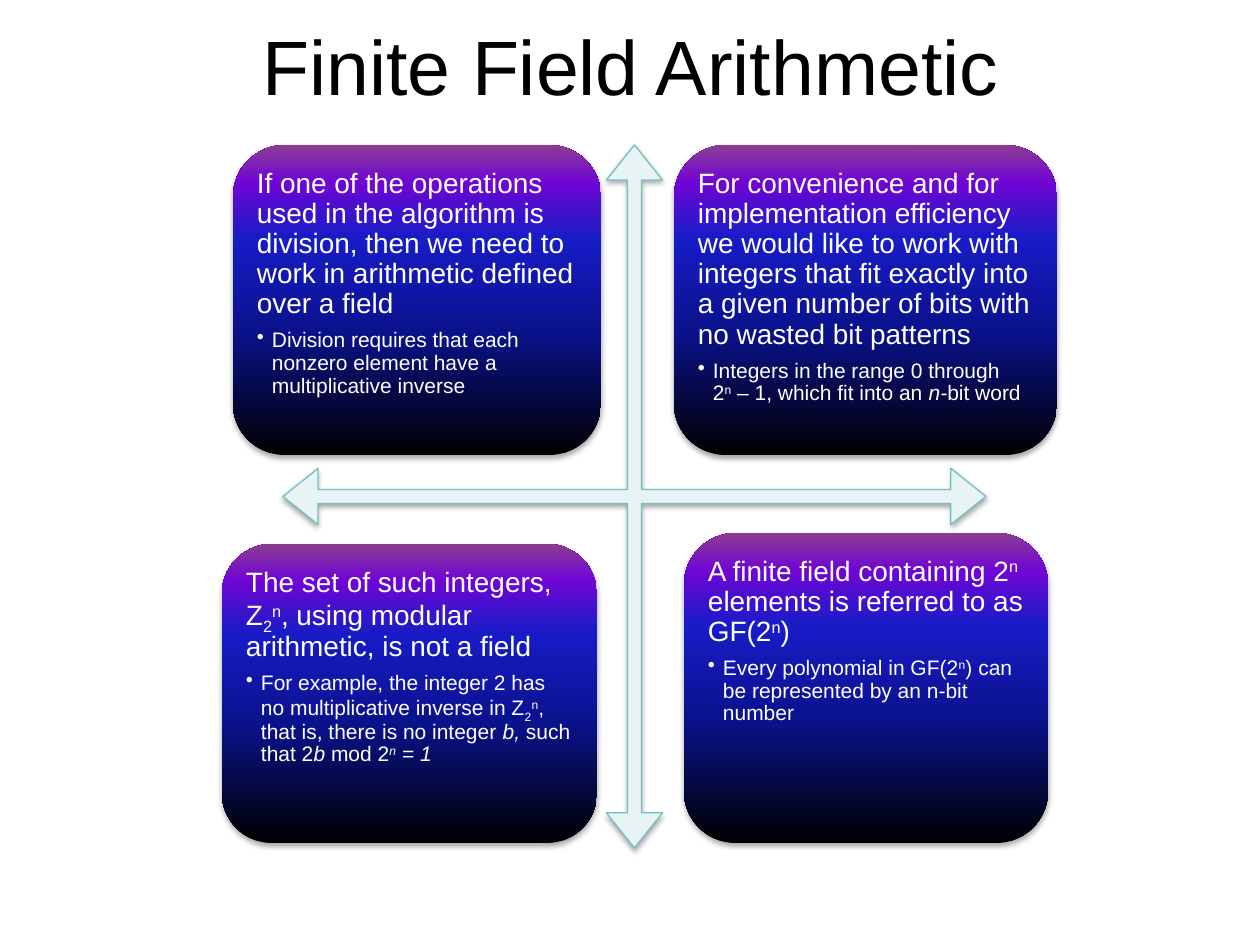
import pptx
import pptx.dml.color
import pptx.enum.shapes
import pptx.enum.text
import pptx.oxml.ns
import pptx.util
from lxml import etree

PX = 914400 / 126
FONT = "Arial"
CARD_STOPS = [(0, "000000"), (40, "0A128C"), (70, "181CC7"), (88, "7005D4"), (100, "8C3D91")]
BASELINES = {"sup": 30000, "sub": -25000}
SUP_N = ("n", "sup")
SUB_2 = ("2", "sub")

# Each card: box, heading spans, bullet spans; a styled span is (text, styles).
CARDS = [
    ((233, 145, 368, 310),
     ["If one of the operations used in the algorithm is division, then we need "
      "to work in arithmetic defined over a field"],
     ["Division requires that each nonzero element have a multiplicative inverse"]),
    ((674, 145, 383, 310),
     ["For convenience and for implementation efficiency we would like to work with "
      "integers that fit exactly into a given number of bits with no wasted bit patterns"],
     ["Integers in the range 0 through", "\n", "2", SUP_N, " – 1, which fit into an ",
      ("n-", "italic"), "bit word"]),
    ((222, 544, 375, 299),
     ["The set of such integers, Z", SUB_2, SUP_N, ", using modular arithmetic, is not a field"],
     ["For example, the integer 2 has no multiplicative inverse in Z", SUB_2, SUP_N,
      ", that is, there is no integer ", ("b, ", "italic"), "such that 2", ("b ", "italic"),
      "mod 2", ("n", "italic sup"), (" = 1", "italic")]),
    ((684, 533, 364, 310),
     ["A finite field containing 2", SUP_N, " elements is referred to as GF(2", SUP_N, ")"],
     ["Every polynomial in GF(2", SUP_N, ") can be represented by an n-bit number"]),
]


def px(length):
    return pptx.util.Emu(round(length * PX))


def place(box):
    return [px(length) for length in box]


def rgb(value):
    return pptx.dml.color.RGBColor.from_string(value)


def add_child(parent, tag, **attributes):
    child = etree.SubElement(parent, pptx.oxml.ns.qn(tag))
    for name, value in attributes.items():
        child.set(name, str(value))
    return child


def add_shadow(shape):
    shape.shadow.inherit = False
    effects = shape._element.spPr.find(pptx.oxml.ns.qn("a:effectLst"))
    shadow = add_child(effects, "a:outerShdw", blurRad=40000, dist=23000,
                       dir=5400000, rotWithShape=0)
    color = add_child(shadow, "a:srgbClr", val="000000")
    add_child(color, "a:alpha", val=35000)


def fill_gradient(shape, stops):
    """Fill from bottom to top with (percent, colour) stops."""
    shape.fill.gradient()
    shape.fill.gradient_angle = 90
    stop_list = shape._element.spPr.find(".//" + pptx.oxml.ns.qn("a:gsLst"))
    for old_stop in list(stop_list):
        stop_list.remove(old_stop)
    for percent, color in stops:
        stop = add_child(stop_list, "a:gs", pos=percent * 1000)
        add_child(stop, "a:srgbClr", val=color)


def set_font(font, size, color):
    font.name = FONT
    font.size = pptx.util.Pt(size)
    font.color.rgb = rgb(color)


def add_spans(para, spans):
    for span in spans:
        if span == "\n":
            para.add_line_break()
            continue
        text, styles = (span, "") if isinstance(span, str) else span
        run = para.add_run()
        run.text = text
        for style in styles.split():
            if style == "italic":
                run.font.italic = True
            else:
                run.font._element.set("baseline", str(BASELINES[style]))


def write_para(para, spans, size, space_after, bullet=False):
    """Write a card paragraph; space_after is a percentage of a line."""
    para.line_spacing = 0.9
    properties = para._p.get_or_add_pPr()
    spacing = add_child(properties, "a:spcAft")
    add_child(spacing, "a:spcPct", val=space_after * 1000)
    if bullet:
        para.level = 1
        indent = px(15)
        properties.set("marL", str(indent))
        properties.set("indent", str(-indent))
        add_child(properties, "a:buChar", char="•")
    set_font(para.font, size, "FFFFFF")
    add_spans(para, spans)


def add_title(page, box, text):
    frame = page.shapes.add_textbox(*place(box)).text_frame
    frame.word_wrap = True
    frame.vertical_anchor = pptx.enum.text.MSO_ANCHOR.MIDDLE
    para = frame.paragraphs[0]
    para.alignment = pptx.enum.text.PP_ALIGN.CENTER
    set_font(para.font, 44, "000000")
    para.add_run().text = text


def add_cross_arrow(page, box):
    arrow = page.shapes.add_shape(pptx.enum.shapes.MSO_SHAPE.QUAD_ARROW, *place(box))
    for index, ratio in enumerate((0.02, 0.04, 0.05)):
        arrow.adjustments[index] = ratio
    arrow.fill.solid()
    arrow.fill.fore_color.rgb = rgb("E7F3F4")
    arrow.line.color.rgb = rgb("72BFC5")
    arrow.line.width = pptx.util.Pt(0.75)
    add_shadow(arrow)


def add_card(page, box, heading, bullet):
    card = page.shapes.add_shape(pptx.enum.shapes.MSO_SHAPE.ROUNDED_RECTANGLE, *place(box))
    fill_gradient(card, CARD_STOPS)
    card.line.fill.background()
    add_shadow(card)

    left, top, width, height = box
    inset = 15
    text_box = (left + inset, top + inset, width - 2 * inset, height - 2 * inset)
    frame = page.shapes.add_textbox(*place(text_box)).text_frame
    frame.word_wrap = True
    frame.margin_left = frame.margin_top = frame.margin_right = frame.margin_bottom = px(9)
    write_para(frame.paragraphs[0], heading, 16, 35)
    write_para(frame.add_paragraph(), bullet, 12, 15, bullet=True)


def main():
    deck = pptx.Presentation()
    deck.slide_width, deck.slide_height = px(1260), px(945)
    page = deck.slides.add_slide(deck.slide_layouts[6])
    add_title(page, (64, 16, 1134, 97), "Finite Field Arithmetic")
    add_cross_arrow(page, (283, 145, 703, 703))
    for box, heading, bullet in CARDS:
        add_card(page, box, heading, bullet)
    deck.save("out.pptx")


if __name__ == "__main__":
    main()
